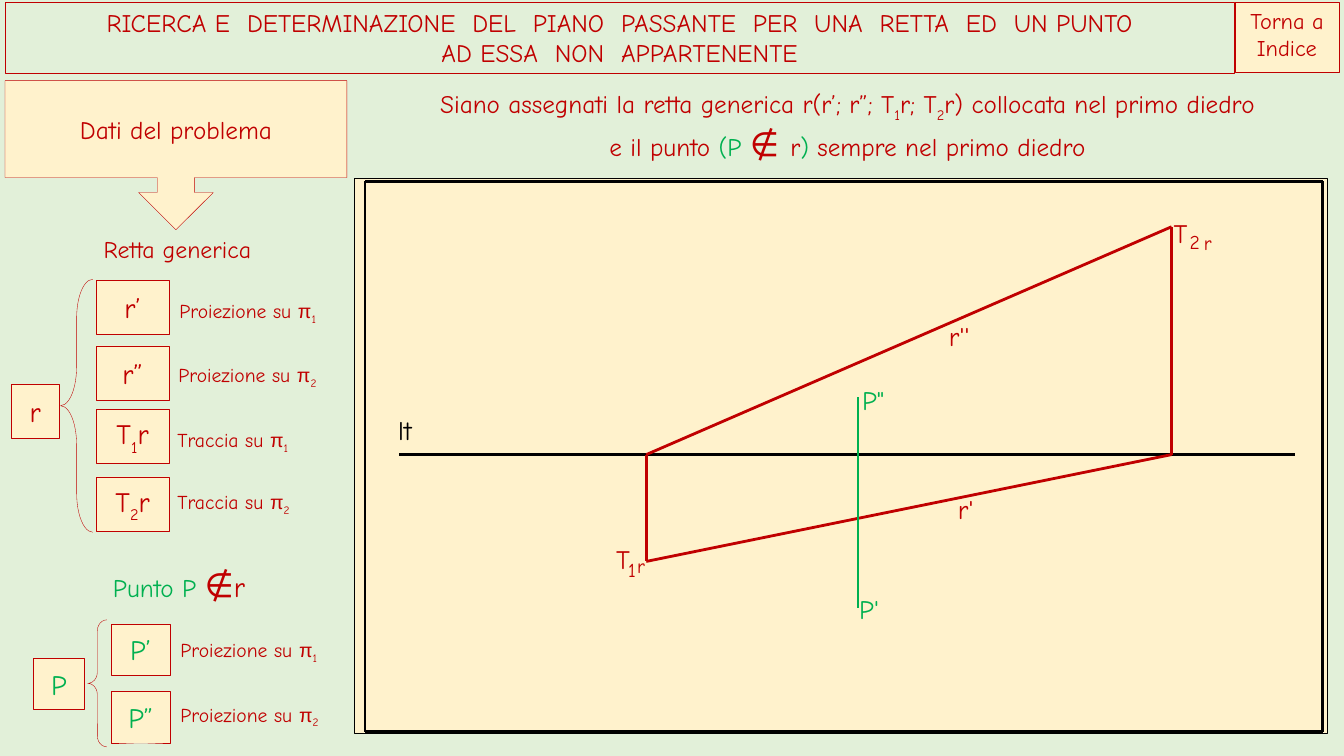
from pptx import Presentation
from pptx.dml.color import RGBColor
from pptx.enum.shapes import MSO_CONNECTOR, MSO_SHAPE
from pptx.enum.text import MSO_ANCHOR, MSO_AUTO_SIZE, PP_ALIGN
from pptx.oxml.ns import qn
from pptx.util import Emu, Pt
from lxml import etree

RECT, BRACE, CALLOUT = MSO_SHAPE.RECTANGLE, MSO_SHAPE.LEFT_BRACE, MSO_SHAPE.DOWN_ARROW_CALLOUT
STRAIGHT = MSO_CONNECTOR.STRAIGHT
TOP, MIDDLE = MSO_ANCHOR.TOP, MSO_ANCHOR.MIDDLE
LEFT, CENTER = PP_ALIGN.LEFT, PP_ALIGN.CENTER
FIXED, GROW = MSO_AUTO_SIZE.NONE, MSO_AUTO_SIZE.SHAPE_TO_FIT_TEXT

PX = 9144  # EMU per px, 100 px to the inch
RED, GREEN, BLACK = "C00000", "00B050", "000000"
CREAM, MINT = "FFF2CC", "E2F0D9"
FONT, MATH_FONT = "Comic Neue", "Arial"


def rgb(value):
    return RGBColor.from_string(value)


def px(*values):
    return [Emu(v * PX) for v in values]


def sub(digit, base=-25000):
    return digit, {"baseline": base}


class Board:
    """Style and drawing methods for the current slide."""

    def __init__(self, prs):
        self.s = prs.slides.add_slide(prs.slide_layouts[5])
        self.s.background.fill.solid()
        self.s.background.fill.fore_color.rgb = rgb(MINT)

    def fill_text(self, sp, paragraphs, size, color=RED, align=CENTER, anchor=TOP,
                  wrap=True, margins=(10, 5), auto=FIXED):
        """Each paragraph is a list of runs: a string, or (string, changes)."""
        tf = sp.text_frame
        mx, my = px(*margins)
        frame = {"word_wrap": wrap, "vertical_anchor": anchor, "auto_size": auto,
                 "margin_left": mx, "margin_right": mx,
                 "margin_top": my, "margin_bottom": my}
        for name, value in frame.items():
            setattr(tf, name, value)
        for i, runs in enumerate(paragraphs):
            p = tf.add_paragraph() if i else tf.paragraphs[0]
            p.alignment = align
            for run in runs:
                text, changes = (run, {}) if isinstance(run, str) else run
                fmt = {"name": FONT, "size": size, "color": color, **changes}
                r = p.add_run()
                r.text = text
                r.font.color.rgb = rgb(fmt.pop("color"))
                if "baseline" in fmt:
                    r._r.get_or_add_rPr().set("baseline", str(fmt.pop("baseline")))
                fmt["size"] = Pt(fmt["size"])
                for name, value in fmt.items():
                    setattr(r.font, name, value)

    def outline(self, sp, color, width):
        if color:
            sp.line.color.rgb = rgb(color)
            sp.line.width = Pt(width)
        else:
            sp.line.fill.background()

    def shape(self, kind, box, fill=CREAM, line=RED, width=0.25, adjust=()):
        sp = self.s.shapes.add_shape(kind, *px(*box))
        sp.shadow.inherit = False
        if fill:
            sp.fill.solid()
            sp.fill.fore_color.rgb = rgb(fill)
        else:
            sp.fill.background()
        self.outline(sp, line, width)
        for i, value in enumerate(adjust):
            sp.adjustments[i] = value
        return sp

    def box(self, box, runs, size=20, color=RED, anchor=MIDDLE, kind=RECT):
        self.fill_text(self.shape(kind, box), [runs], size, color, anchor=anchor)

    def label(self, box, text, size, color):
        sp = self.shape(RECT, box, line=None)
        self.fill_text(sp, [[text]], size, color, LEFT, wrap=False, margins=(0, 0), auto=GROW)

    def text(self, box, paragraphs, size, color=RED, align=CENTER):
        sp = self.s.shapes.add_textbox(*px(*box))
        self.fill_text(sp, paragraphs, size, color, align, auto=GROW)

    def line(self, start, end, color):
        sp = self.s.shapes.add_connector(STRAIGHT, *px(*start, *end))
        self.outline(sp, color, 0)
        etree.SubElement(sp._element.spPr, qn("a:effectLst"))

    def title(self, box, paragraphs, size):
        sp = self.s.shapes.title
        sp.left, sp.top, sp.width, sp.height = px(*box)
        self.outline(sp, RED, 0.25)
        self.fill_text(sp, paragraphs, size)


def main():
    prs = Presentation()
    prs.slide_width, prs.slide_height = px(1333, 750)
    b = Board(prs)

    # Header
    b.title((5, 2, 1219, 71), [
        ["RICERCA E  DETERMINAZIONE  DEL  PIANO  PASSANTE  PER  UNA  RETTA  ED  UN PUNTO"],
        ["AD ESSA  NON  APPARTENENTE"]], 18)
    b.box((1225, 2, 103, 70), ["Torna a Indice"], 16, anchor=TOP)
    b.box((5, 80, 339, 148), ["Dati del problema"], 18, kind=CALLOUT)

    # Problem statement
    not_in = {"size": 24, "color": RED}
    b.text((364, 83, 953, 81), [
        ["Siano assegnati la retta generica r(r’; r”; T", sub("1"), "r; T", sub("2"),
         "r) collocata nel primo diedro"],
        ["e il punto ", ("(P ", {"color": GREEN}), ("∉ ", not_in), "r",
         (") ", {"color": GREEN}), "sempre nel primo diedro"]], 18)

    # Drawing sheet with its inner frame
    b.shape(RECT, (352, 177, 965, 551), line=BLACK, width=0.75)
    corners = [(362, 726), (1312, 726), (1312, 180), (362, 180)]
    for start, end in zip(corners, corners[1:] + corners[:1]):
        b.line(start, end, BLACK)

    # Labels of the projections
    for box, text, size, color in [
        ((395, 411, 33, 53), "lt", 19, BLACK),
        ((852, 588, 24, 32), "P'", 19, GREEN),
        ((855, 381, 25, 32), 'P"', 19, GREEN),
        ((1164, 215, 18, 30), "T", 19, RED),
        ((1180, 228, 12, 22), "2", 14, RED),
        ((1194, 229, 9, 22), "r", 14, RED),
        ((611, 539, 18, 30), "T", 19, RED),
        ((623, 553, 9, 22), "1", 14, RED),
        ((632, 549, 9, 22), "r", 14, RED),
        ((950, 489, 23, 30), "r'", 19, RED),
        ((941, 317, 32, 26), "r''", 19, RED),
    ]:
        b.label(box, text, size, color)

    # Ground line, line r with its traces, point P
    t1, t2 = (641, 557), (1162, 225)
    t1_ground, t2_ground = (641, 451), (1162, 451)
    b.line((396, 451), (1284, 451), BLACK)
    for start, end in [(t1_ground, t1), (t2, t2_ground), (t1_ground, t2), (t2_ground, t1)]:
        b.line(start, end, RED)
    b.line((851, 394), (851, 603), GREEN)

    # Headings, braces and main symbols of the data column
    b.text((5, 228, 342, 39), [["Retta generica"]], 17)
    b.text((5, 555, 345, 50), [[("Punto P ", {"color": GREEN}), ("∉", not_in),
                                ("r", {"size": 20})]], 18)
    b.shape(BRACE, (60, 277, 32, 251), fill=None, adjust=(1.213, 0.5))
    b.shape(BRACE, (87, 615, 19, 126), fill=None, adjust=(0.577, 0.5))
    b.box((11, 381, 48, 54), ["r"])
    b.box((33, 653, 51, 51), ["P"], color=GREEN)

    # Given elements, each with its caption
    line_size, point_size = (73, 54), (59, 51)
    for corner, size, runs, color, caption_at, caption, plane in [
        ((95, 278), line_size, ["r’"], RED, (168, 292), "Proiezione", "1"),
        ((95, 343), line_size, ["r”"], RED, (167, 355), "Proiezione", "2"),
        ((95, 406), line_size, ["T", sub("1", -30000), "r"], RED, (166, 420), "Traccia", "1"),
        ((95, 473), line_size, ["T", sub("2", -30000), "r"], RED, (166, 481), "Traccia", "2"),
        ((110, 619), point_size, ["P’"], GREEN, (169, 628), "Proiezione", "1"),
        ((110, 686), point_size, ["P”"], GREEN, (169, 692), "Proiezione", "2"),
    ]:
        b.box((*corner, *size), runs, color=color)
        b.text((*caption_at, 175, 34),
               [[f"{caption} su ", ("π", {"name": MATH_FONT}), sub(plane)]], 14, align=LEFT)

    prs.save("out.pptx")


if __name__ == "__main__":
    main()
